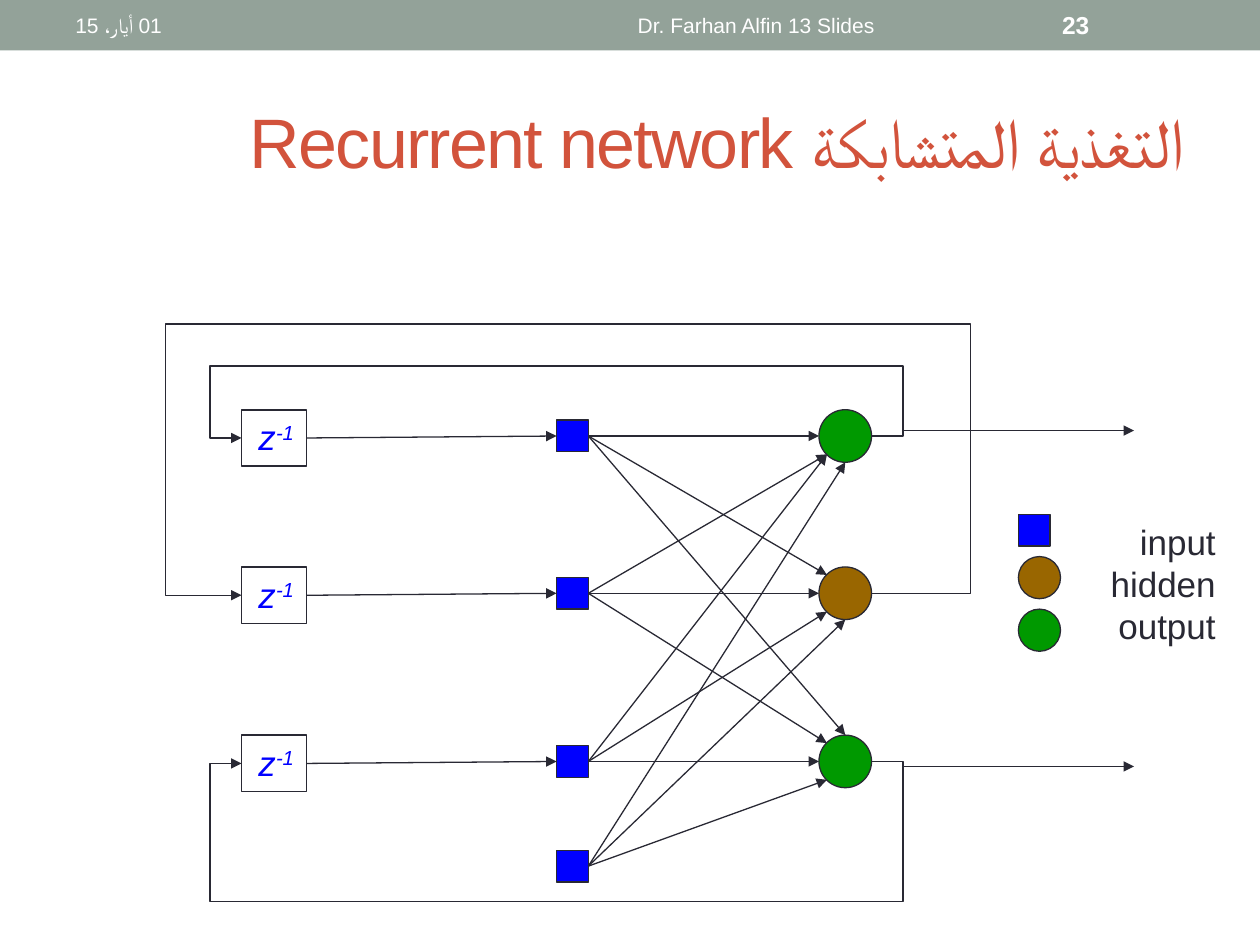
from dataclasses import dataclass
from pptx import Presentation
from pptx.dml.color import RGBColor
from pptx.enum.shapes import MSO_CONNECTOR, MSO_SHAPE
from pptx.enum.text import MSO_ANCHOR, MSO_AUTO_SIZE
from pptx.oxml import parse_xml
from pptx.oxml.ns import nsdecls, qn
from pptx.slide import Slide
from pptx.util import Cm, Pt

ROWS = (8.79, 11.96, 15.35, 17.46)
INPUT_LEFT, INPUT_SIZE = 11.22, 0.64
NEURON_LEFT, NEURON_SIZE = 16.51, 1.06
DELAY_LEFT, DELAY_WIDTH, DELAY_HEIGHT = 4.87, 1.31, 1.14
DELAY_SHIFT = 0.04
BLUE, GREEN, BROWN = "0000FF", "009900", "996600"
WHITE, INK, SAGE, BRICK = "FFFFFF", "292934", "93A299", "D2533C"
NEURON_FILLS = (GREEN, BROWN, GREEN)
SQUARE, CIRCLE = MSO_SHAPE.RECTANGLE, MSO_SHAPE.OVAL
LINKS = (
    ("left", "upper left", "top"),
    ("lower left", "left", "upper left"),
    ("lower left", "lower left", "left"),
    ("bottom", "bottom", "lower left"),
)
SITES = {
    "left": (-0.53, 0),
    "top": (0, -0.53),
    "bottom": (0, 0.53),
    "upper left": (-0.37, -0.37),
    "lower left": (-0.37, 0.37),
}
FEEDBACK = ((18.2, 7.38, 4.23), (19.56, 6.53, 3.33), (18.2, 18.17, 4.23))


def colour(code):
    return RGBColor.from_string(code)


def write(para, text, size=20, code=INK, bold=False, italic=False, raised=False, spacing=None):
    span = para.add_run()
    span.text = text
    font = span.font
    font.name, font.size, font.bold, font.italic = "Arial", Pt(size), bold, italic
    font.color.rgb = colour(code)
    properties = font._element
    properties.append(parse_xml(f'<a:cs {nsdecls("a")} typeface="Arial"/>'))
    if raised:
        properties.set("baseline", "30000")
    if spacing is not None:
        properties.set("spc", str(spacing))


def right_to_left(para, align):
    properties = para._p.get_or_add_pPr()
    properties.set("algn", align)
    properties.set("rtl", "1")


@dataclass
class Diagram:
    """Draws styled elements on one page, with lengths in centimetres."""

    page: Slide
    line_code: str = INK
    line_width: float = 0.75

    def shape(self, kind, left, top, width, height, fill=None, line_width=None):
        box = self.page.shapes.add_shape(kind, Cm(left), Cm(top), Cm(width), Cm(height))
        box.shadow.inherit = False
        if fill:
            box.fill.solid()
            box.fill.fore_color.rgb = colour(fill)
        else:
            box.fill.background()
        box.line.color.rgb = colour(self.line_code)
        box.line.width = Pt(line_width or self.line_width)
        return box

    def text(self, left, top, width, height, lines, align="l", anchor=MSO_ANCHOR.MIDDLE, **style):
        box = self.page.shapes.add_textbox(Cm(left), Cm(top), Cm(width), Cm(height))
        frame = box.text_frame
        frame.word_wrap = True
        frame.vertical_anchor = anchor
        for number, line in enumerate(lines):
            para = frame.add_paragraph() if number else frame.paragraphs[0]
            right_to_left(para, align)
            write(para, line, **style)

    def delay(self, middle):
        box = self.shape(SQUARE, DELAY_LEFT, middle - DELAY_HEIGHT / 2,
                         DELAY_WIDTH, DELAY_HEIGHT, line_width=1)
        frame = box.text_frame
        frame.word_wrap = False
        frame.auto_size = MSO_AUTO_SIZE.SHAPE_TO_FIT_TEXT
        frame.vertical_anchor = MSO_ANCHOR.TOP
        para = frame.paragraphs[0]
        right_to_left(para, "r")
        write(para, "z", code=BLUE, italic=True)
        write(para, "-1", code=BLUE, italic=True, raised=True)

    def arrow(self, start, end, kind=MSO_CONNECTOR.STRAIGHT):
        link = self.page.shapes.add_connector(kind, *(Cm(value) for value in (*start, *end)))
        link.line.color.rgb = colour(self.line_code)
        link.line.width = Pt(self.line_width)
        link.line._get_or_add_ln().append(parse_xml(f'<a:tailEnd {nsdecls("a")} type="triangle"/>'))
        link._element.spPr.append(parse_xml(f'<a:effectLst {nsdecls("a")}/>'))
        return link

    def loop(self, start, end, right, level, left):
        link = self.arrow(start, end, MSO_CONNECTOR.ELBOW)
        width, height = end[0] - start[0], end[1] - start[1]
        ratios = ((right - start[0]) / width, (level - start[1]) / height,
                  (left - start[0]) / width)
        geometry = link._element.spPr.find(qn("a:prstGeom"))
        geometry.set("prst", "bentConnector5")
        guides = geometry.get_or_add_avLst()
        for number, ratio in enumerate(ratios, 1):
            guides.append(parse_xml(f'<a:gd {nsdecls("a")} name="adj{number}" '
                                    f'fmla="val {round(ratio * 100000)}"/>'))


def draw_header(diagram):
    band = diagram.shape(SQUARE, 0, 0, 25.4, 1.02, SAGE)
    band.line.fill.background()
    diagram.text(1.27, 1.47, 22.86, 2.74, ["التغذية المتشابكة Recurrent network"],
                 "r", size=40, code=BRICK, spacing=-100)
    diagram.text(1.27, 0.05, 8.05, 0.91, ["01 أيار، 15"], size=12, code=WHITE)
    diagram.text(9.53, 0.05, 11.43, 0.91, ["Dr. Farhan Alfin 13 Slides"], "ctr", size=12, code=WHITE)
    diagram.text(21.16, 0.05, 2.97, 0.91, ["23"], size=14, code=WHITE, bold=True)


def draw_network(diagram):
    input_right = INPUT_LEFT + INPUT_SIZE
    neuron_middle = NEURON_LEFT + NEURON_SIZE / 2
    for row in ROWS:
        diagram.shape(SQUARE, INPUT_LEFT, row - INPUT_SIZE / 2, INPUT_SIZE, INPUT_SIZE, BLUE)
    for row, fill, route in zip(ROWS, NEURON_FILLS, FEEDBACK):
        delay_row = row + DELAY_SHIFT
        diagram.shape(CIRCLE, NEURON_LEFT, row - NEURON_SIZE / 2, NEURON_SIZE, NEURON_SIZE, fill)
        diagram.delay(delay_row)
        diagram.arrow((DELAY_LEFT + DELAY_WIDTH, delay_row), (INPUT_LEFT, row))
        diagram.loop((NEURON_LEFT + NEURON_SIZE, row), (DELAY_LEFT, delay_row), *route)
    for row, sites in zip(ROWS, LINKS):
        for target, site in zip(ROWS, sites):
            across, down = SITES[site]
            diagram.arrow((input_right, row), (neuron_middle + across, target + down))
    for level in (8.68, 15.45):
        diagram.arrow((18.2, level), (22.86, level))


def draw_legend(diagram):
    for kind, top, size, fill in ((SQUARE, 10.37, 0.64, BLUE), (CIRCLE, 11.22, 0.85, BROWN),
                                  (CIRCLE, 12.28, 0.85, GREEN)):
        diagram.shape(kind, 20.53, top, size, size, fill)
    diagram.text(21.8, 10.37, 2.96, 2.8, ["input", "hidden", "output"], "r", MSO_ANCHOR.TOP)


def main():
    deck = Presentation()
    deck.slide_width, deck.slide_height = Cm(25.4), Cm(19.05)
    diagram = Diagram(deck.slides.add_slide(deck.slide_layouts[6]))
    draw_header(diagram)
    draw_network(diagram)
    draw_legend(diagram)
    deck.save("out.pptx")


if __name__ == "__main__":
    main()
